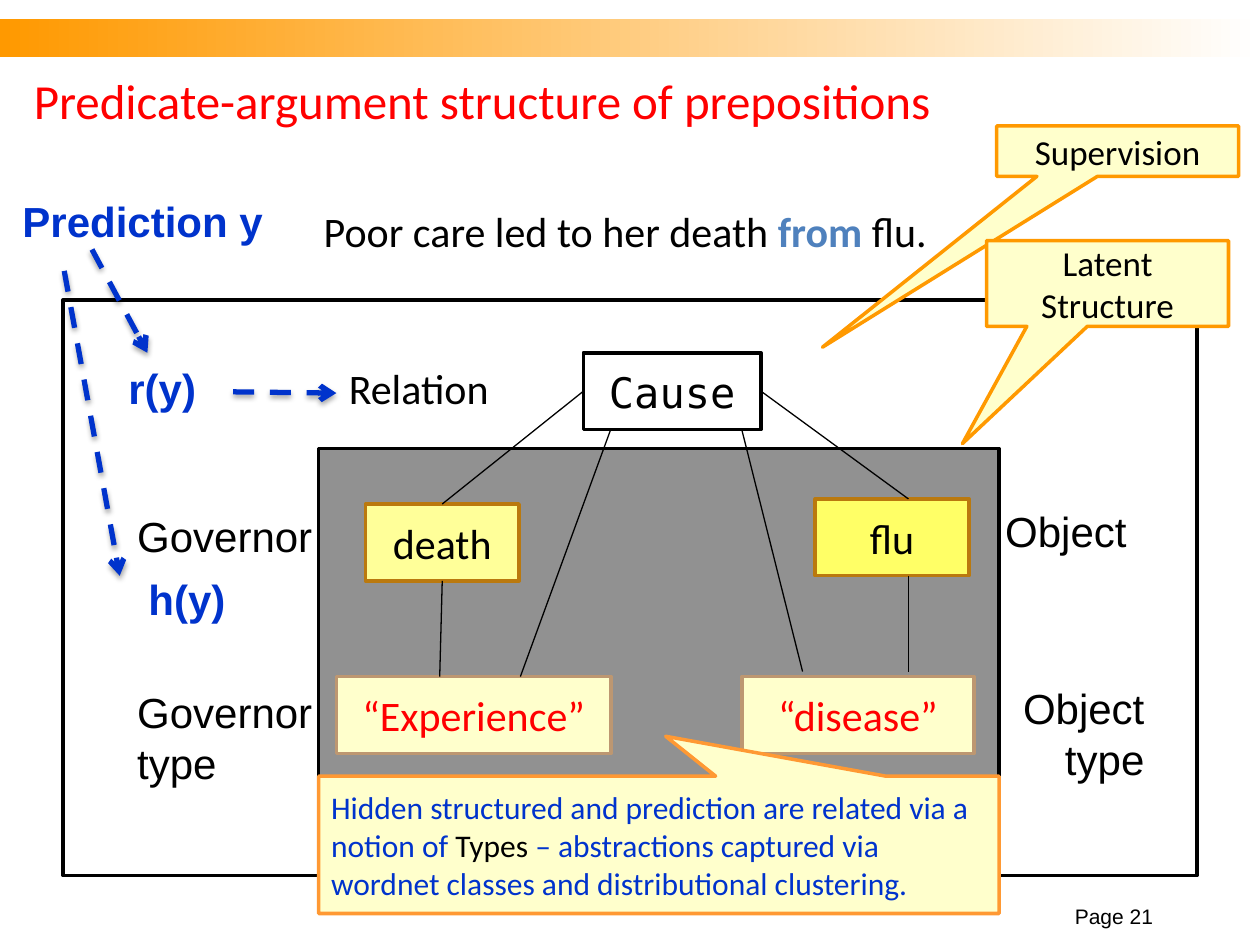
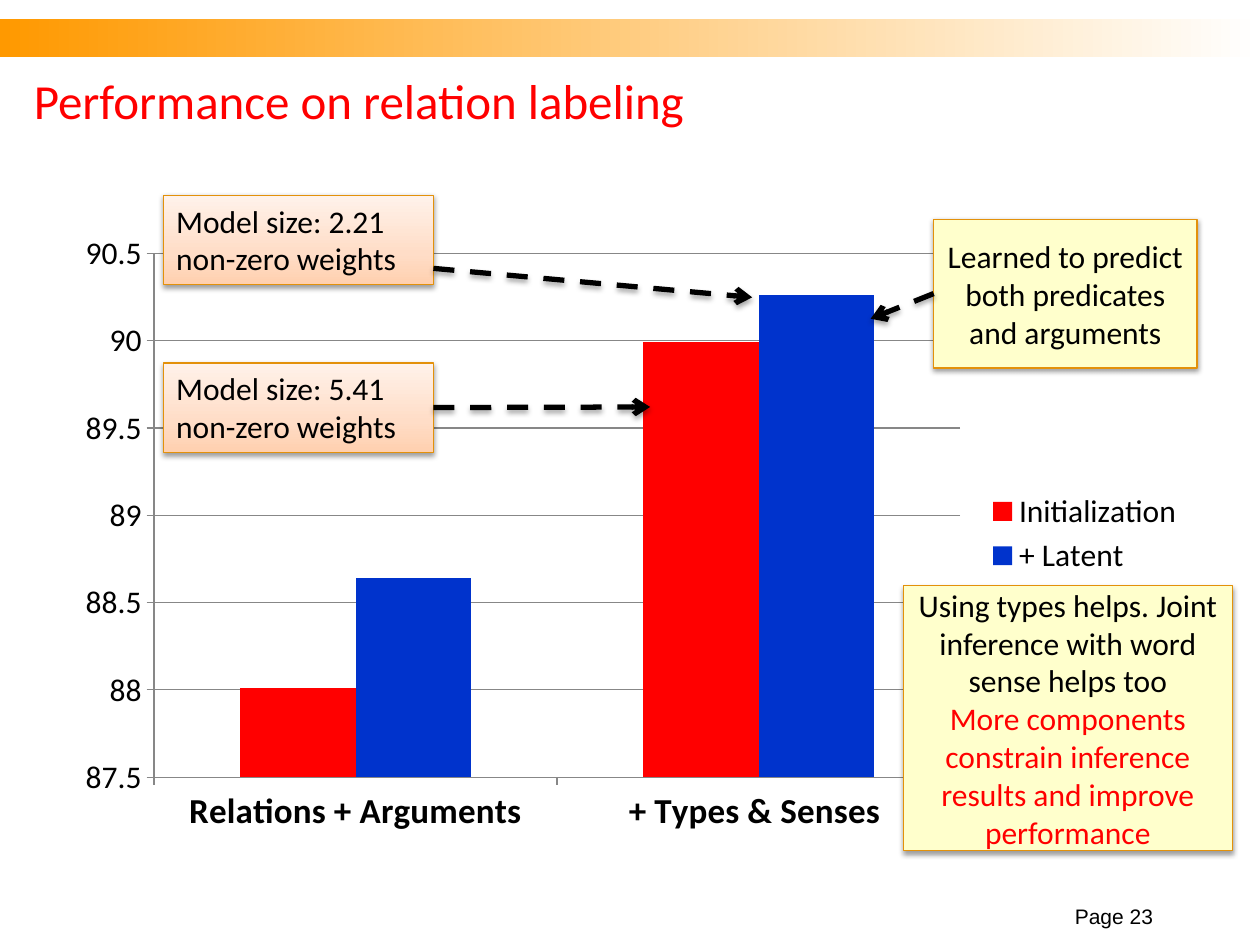
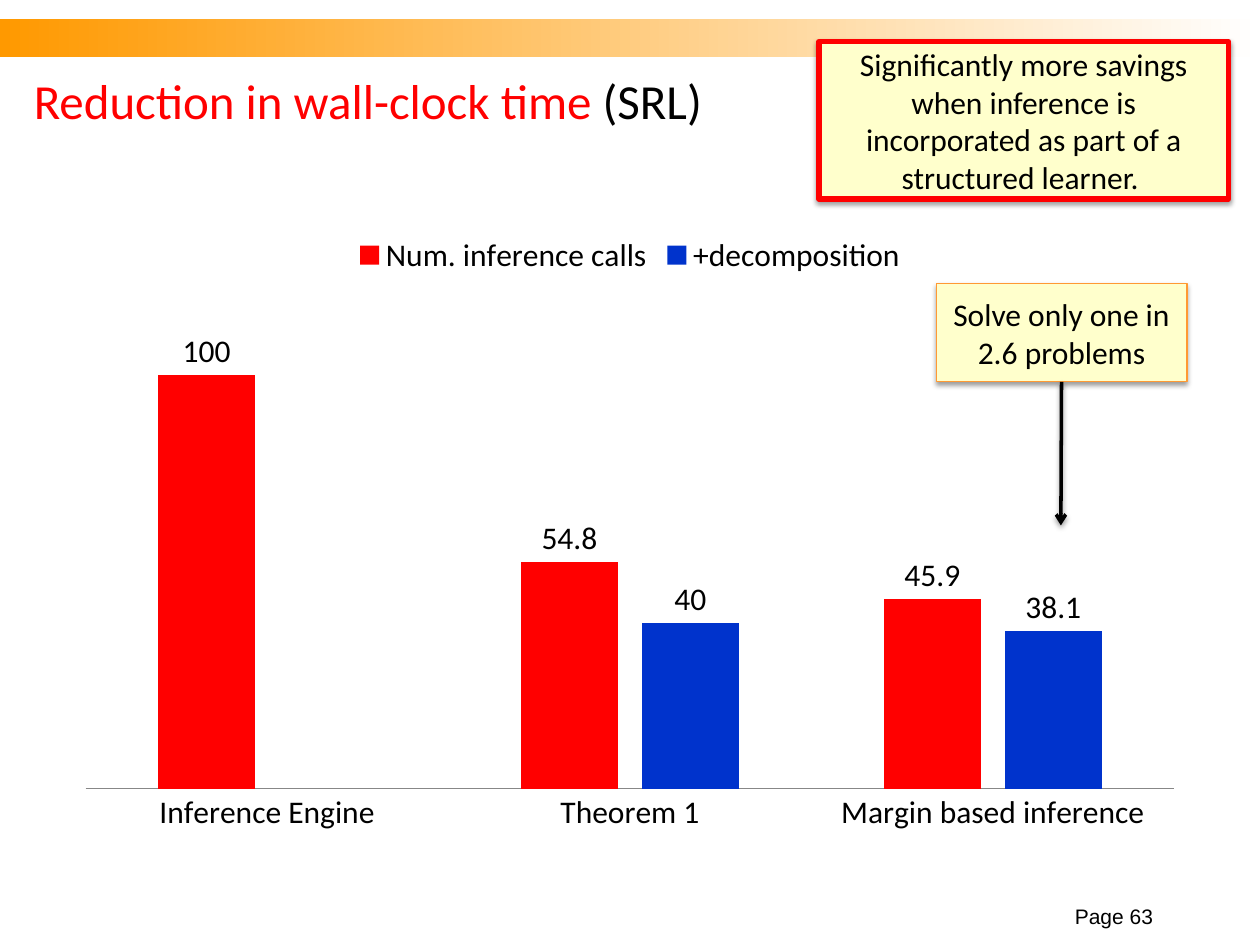
from lxml.etree import SubElement
from pptx import Presentation
from pptx.chart.data import CategoryChartData
from pptx.dml.color import RGBColor
from pptx.enum.chart import XL_CHART_TYPE, XL_LABEL_POSITION, XL_LEGEND_POSITION, XL_TICK_MARK
from pptx.enum.dml import MSO_LINE
from pptx.enum.shapes import MSO_CONNECTOR, MSO_SHAPE
from pptx.enum.text import MSO_ANCHOR, PP_ALIGN
from pptx.oxml.ns import qn
from pptx.util import Inches, Pt

COLORS = {
    "black": "000000", "white": "FFFFFF", "red": "FF0000", "blue": "0033CC",
    "steel": "4F81BD", "orange": "FF9900", "light orange": "FF9933",
    "cream": "FFFFCC", "pale yellow": "FFFF99", "yellow": "FFFF66",
    "brown": "BA790E", "tan": "BD9771", "amber": "E3910A", "grid": "878787",
    "peach": "FFD0AF", "mid peach": "FFDDC7", "light peach": "FFF2EA",
}
BAND_STOPS = [(0, "orange"), (100, "white")]
PEACH_STOPS = [(0, "peach"), (35, "mid peach"), (100, "light peach")]
BOX_SHADOW = {"opacity": 38, "distance": 1.6}
ARROW_SHADOW = {"opacity": 35, "distance": 1.8}
TOP, LEFT, BOTTOM, RIGHT = range(4)


def rgb(name):
    return RGBColor.from_string(COLORS[name])


def format_font(font, size, color="black", name="Calibri", bold=False):
    font.name, font.size, font.bold = name, Pt(size), bold
    font.color.rgb = rgb(color)


def write_text(shape, content, size=24, color="black", font="Calibri", bold=False,
               align=PP_ALIGN.CENTER, anchor=MSO_ANCHOR.MIDDLE, wrap=True):
    """Fill a shape; content is a string or a list of paragraphs, each a list of
    runs given as (text, overrides)."""
    frame = shape.text_frame
    frame.word_wrap = wrap
    frame.vertical_anchor = anchor
    paragraphs = [[(content, {})]] if isinstance(content, str) else content
    for index, runs in enumerate(paragraphs):
        paragraph = frame.add_paragraph() if index else frame.paragraphs[0]
        paragraph.alignment = align
        for text, overrides in runs:
            run = paragraph.add_run()
            run.text = text
            look = {"size": size, "color": color, "name": font, "bold": bold}
            format_font(run.font, **{**look, **overrides})


def set_effects(shape, shadow=None):
    """Replace the theme's shadow by the given one, or by none."""
    properties = shape._element.spPr
    effects = properties.find(qn("a:effectLst"))
    if effects is None:
        effects = SubElement(properties, qn("a:effectLst"))
    if shadow:
        outer = SubElement(effects, qn("a:outerShdw"), blurRad=str(Pt(3.1)),
                           dist=str(Pt(shadow["distance"])), dir="5400000", rotWithShape="0")
        shade = SubElement(outer, qn("a:srgbClr"), val=COLORS["black"])
        SubElement(shade, qn("a:alpha"), val=str(shadow["opacity"] * 1000))


def fill_gradient(shape, stops, angle):
    shape.fill.gradient()
    shape.fill.gradient_angle = angle
    stop_list = shape._element.spPr.find(qn("a:gradFill")).find(qn("a:gsLst"))
    for stop in list(stop_list):
        stop_list.remove(stop)
    for position, color in stops:
        stop = SubElement(stop_list, qn("a:gs"), pos=str(position * 1000))
        SubElement(stop, qn("a:srgbClr"), val=COLORS[color])


def add_box(slide, at, text=None, fill="cream", line="black", width=2, shadow=None,
            kind=MSO_SHAPE.RECTANGLE, pointer=(), stops=None, angle=90, **text_format):
    """Add a rectangle or callout; pointer is the callout tip relative to its centre."""
    shape = slide.shapes.add_shape(kind, *map(Inches, at))
    for index, value in enumerate(pointer):
        shape.adjustments[index] = value
    if stops:
        fill_gradient(shape, stops, angle)
    else:
        shape.fill.solid()
        shape.fill.fore_color.rgb = rgb(fill)
    if line:
        shape.line.color.rgb = rgb(line)
        shape.line.width = Pt(width)
    else:
        shape.line.fill.background()
    shape.shadow.inherit = False
    set_effects(shape, shadow)
    if text:
        write_text(shape, text, **text_format)
    return shape


def add_callout(slide, at, text, pointer, line="orange", **text_format):
    add_box(slide, at, text, line=line, kind=MSO_SHAPE.RECTANGULAR_CALLOUT,
            pointer=pointer, **text_format)


def add_note(slide, at, text, line="amber", width=0.75, **options):
    return add_box(slide, at, text, line=line, width=width, shadow=BOX_SHADOW,
                   size=18, **options)


def add_label(slide, at, text, align=PP_ALIGN.LEFT, anchor=MSO_ANCHOR.TOP, **text_format):
    box = slide.shapes.add_textbox(*map(Inches, at))
    write_text(box, text, align=align, anchor=anchor, **text_format)


def add_line(slide, start, end, color="black", width=0.75, dashed=False, arrow=False,
             shadow=None):
    """Join two ends, each a point or a (shape, side) pair."""
    def point(target):
        return (0, 0) if hasattr(target[0], "shape_id") else map(Inches, target)

    line = slide.shapes.add_connector(MSO_CONNECTOR.STRAIGHT, *point(start), *point(end))
    if hasattr(start[0], "shape_id"):
        line.begin_connect(*start)
    if hasattr(end[0], "shape_id"):
        line.end_connect(*end)
    line.line.color.rgb = rgb(color)
    line.line.width = Pt(width)
    if dashed:
        line.line.dash_style = MSO_LINE.DASH
    if arrow:
        SubElement(line._element.spPr.find(qn("a:ln")), qn("a:tailEnd"), type="arrow")
    set_effects(line, shadow)


def add_dashed_arrow(slide, start, end, color="black"):
    add_line(slide, start, end, color, 3, dashed=True, arrow=True, shadow=ARROW_SHADOW)


def add_column_chart(slide, top, categories, series, legend_position):
    """Add a clustered column chart; series maps a name to (values, color)."""
    data = CategoryChartData()
    data.categories = categories
    for name, (values, _) in series.items():
        data.add_series(name, values)
    chart = slide.shapes.add_chart(XL_CHART_TYPE.COLUMN_CLUSTERED, Inches(0.5), Inches(top),
                                   Inches(9), Inches(4.95), data).chart
    format_font(chart.font, 18)
    chart.has_title = False
    chart.has_legend = True
    chart.legend.position = legend_position
    chart.legend.include_in_layout = False
    plot = chart.plots[0]
    plot.gap_width = 150
    plot.vary_by_categories = False
    for column, (_, color) in zip(plot.series, series.values()):
        column.format.fill.solid()
        column.format.fill.fore_color.rgb = rgb(color)
        column.invert_if_negative = False
    chart.category_axis.format.line.color.rgb = rgb("grid")
    return chart


def add_base_slide(presentation, title, page):
    slide = presentation.slides.add_slide(presentation.slide_layouts[6])
    add_box(slide, (0, 0.15, 10, 0.3), line=None, stops=BAND_STOPS, angle=0)
    add_label(slide, (0.17, 0.5, 9, 0.58), title, size=28, color="red",
              anchor=MSO_ANCHOR.MIDDLE)
    add_label(slide, (8.25, 7.17, 1, 0.25), f"Page {page}", size=12, font="Arial",
              align=PP_ALIGN.RIGHT, anchor=MSO_ANCHOR.BOTTOM)
    return slide


def build_structure_slide(presentation):
    slide = add_base_slide(presentation, "Predicate-argument structure of prepositions", 21)
    add_box(slide, (0.5, 2.38, 9, 4.57), fill="white")
    add_label(slide, (0.5, 1.58, 9, 4.95), [[
        ("Poor care led to her death ", {}),
        ("from ", {"color": "steel", "bold": True}),
        ("flu. ", {}),
    ]], align=PP_ALIGN.CENTER)
    cause = add_box(slide, (4.63, 2.8, 1.41, 0.61), "Cause", fill="white",
                    font="DejaVu Sans Mono")
    hidden_area = add_box(slide, (2.53, 3.56, 5.4, 3.14), fill="black")
    hidden_color = hidden_area._element.spPr.find(qn("a:solidFill"))[0]
    SubElement(hidden_color, qn("a:alpha"), val="43000")
    death = add_box(slide, (2.9, 4, 1.22, 0.61), "death", fill="pale yellow", line="brown")
    add_box(slide, (6.47, 3.96, 1.22, 0.61), "flu", fill="yellow", line="brown")
    for left, width, text in [(2.67, 2.18, "“Experience”"), (5.89, 1.84, "“disease”")]:
        add_box(slide, (left, 5.37, width, 0.61), text, line="tan", color="red")

    for at, text, align in [
        ((0.99, 4, 1.91, 0.5), "Governor", PP_ALIGN.LEFT),
        ((7.58, 3.96, 1.46, 0.5), "Object", PP_ALIGN.RIGHT),
        ((0.99, 5.4, 1.91, 0.91), "Governor type", PP_ALIGN.LEFT),
        ((7.49, 5.37, 1.69, 0.91), "Object type", PP_ALIGN.RIGHT),
    ]:
        add_label(slide, at, text, font="Arial", align=align)
    add_label(slide, (2.67, 2.83, 1.91, 0.5), "Relation")

    for start, end in [
        ((cause, LEFT), (death, TOP)),
        ((death, BOTTOM), (3.49, 5.37)),
        ((4.85, 3.4), (4.13, 5.37)),
        ((cause, RIGHT), (7.21, 3.96)),
        ((7.21, 4.57), (7.21, 5.33)),
        ((5.89, 3.42), (6.37, 5.33)),
    ]:
        add_line(slide, start, end)

    add_callout(slide, (7.91, 1, 1.92, 0.4), "Supervision", (-1.22, 3.89), size=20)
    add_callout(slide, (7.83, 1.91, 1.92, 0.68), "Latent Structure", (-0.6, 1.87), size=20)

    for start, end in [
        ((0.73, 1.98), (1.17, 2.8)),
        ((1.85, 3.11), (2.67, 3.12)),
        ((0.51, 2.15), (0.95, 4.57)),
    ]:
        add_dashed_arrow(slide, start, end, "blue")
    for at, text in [
        ((0.92, 2.83, 0.75, 0.5), "r(y)"),
        ((1.08, 4.5, 0.82, 0.5), "h(y)"),
        ((0.08, 1.5, 2.11, 0.5), "Prediction y"),
    ]:
        add_label(slide, at, text, font="Arial", color="blue", bold=True, wrap=False)

    add_callout(slide, (2.53, 6.16, 5.4, 1.09), [[
        ("Hidden structured and prediction are related via a notion of ", {}),
        ("Types", {"color": "black"}),
        (" – abstractions captured via wordnet classes and distributional clustering.", {}),
    ]], (0.01, -0.79), line="light orange", size=18, color="blue", align=PP_ALIGN.LEFT)


def build_performance_slide(presentation):
    slide = add_base_slide(presentation, "Performance on relation labeling", 23)
    chart = add_column_chart(
        slide, 1.76, ["Relations + Arguments", "+ Types & Senses "],
        {"Initialization": ([88.01, 89.99], "red"), "+ Latent": ([88.64, 90.26], "blue")},
        XL_LEGEND_POSITION.RIGHT)
    format_font(chart.category_axis.tick_labels.font, 20, bold=True)
    value_axis = chart.value_axis
    value_axis.minimum_scale = 87.5
    value_axis.format.line.color.rgb = rgb("grid")
    value_axis.major_gridlines.format.line.color.rgb = rgb("grid")

    small_model, large_model = [
        add_note(slide, (1.3, top, 2.14, 0.71), f"Model size: {size} non-zero weights",
                 stops=PEACH_STOPS, align=PP_ALIGN.LEFT, anchor=MSO_ANCHOR.TOP)
        for top, size in [(1.55, "2.21"), (2.88, "5.41")]]
    add_dashed_arrow(slide, (large_model, RIGHT), (5.16, 3.23))
    add_dashed_arrow(slide, (3.44, 2.13), (5.97, 2.36))
    learned = add_note(slide, (7.41, 1.74, 2.09, 1.18),
                       "Learned to predict both predicates and arguments")
    add_dashed_arrow(slide, (learned, LEFT), (6.91, 2.53))
    add_note(slide, (7.17, 4.65, 2.61, 2.1), [
        [("Using types helps. Joint inference with word sense helps too", {})],
        [("More components constrain inference results and improve performance",
          {"color": "red"})],
    ])


def build_time_slide(presentation):
    title = [[("Reduction in wall-clock time ", {}), ("(SRL)", {"color": "black"})]]
    slide = add_base_slide(presentation, title, 63)
    chart = add_column_chart(
        slide, 1.75, ["Inference Engine", "Theorem 1", "Margin based inference"],
        {"Num. inference calls": ([100, 54.8, 45.9], "red"),
         "+decomposition": ([None, 40, 38.1], "blue")},
        XL_LEGEND_POSITION.TOP)
    chart.category_axis.major_tick_mark = XL_TICK_MARK.NONE
    chart.value_axis.visible = False
    chart.value_axis.has_major_gridlines = False
    chart.plots[0].overlap = -25
    for column in chart.plots[0].series:
        labels = column.data_labels
        labels.show_value = True
        labels.position = XL_LABEL_POSITION.OUTSIDE_END
        format_font(labels.font, 18)

    solve = add_note(slide, (7.43, 2.25, 1.99, 0.78), "Solve only one in 2.6 problems",
                     line="light orange")
    add_line(slide, (solve, BOTTOM), (8.42, 4.17), width=2, arrow=True, shadow=BOX_SHADOW)
    add_note(slide, (6.5, 0.33, 3.25, 1.25),
             "Significantly more savings when inference is incorporated as part of a "
             "structured learner. ", line="red", width=3)


def main():
    presentation = Presentation()
    presentation.slide_width, presentation.slide_height = Inches(10), Inches(7.5)
    build_structure_slide(presentation)
    build_performance_slide(presentation)
    build_time_slide(presentation)
    presentation.save("out.pptx")


if __name__ == "__main__":
    main()
